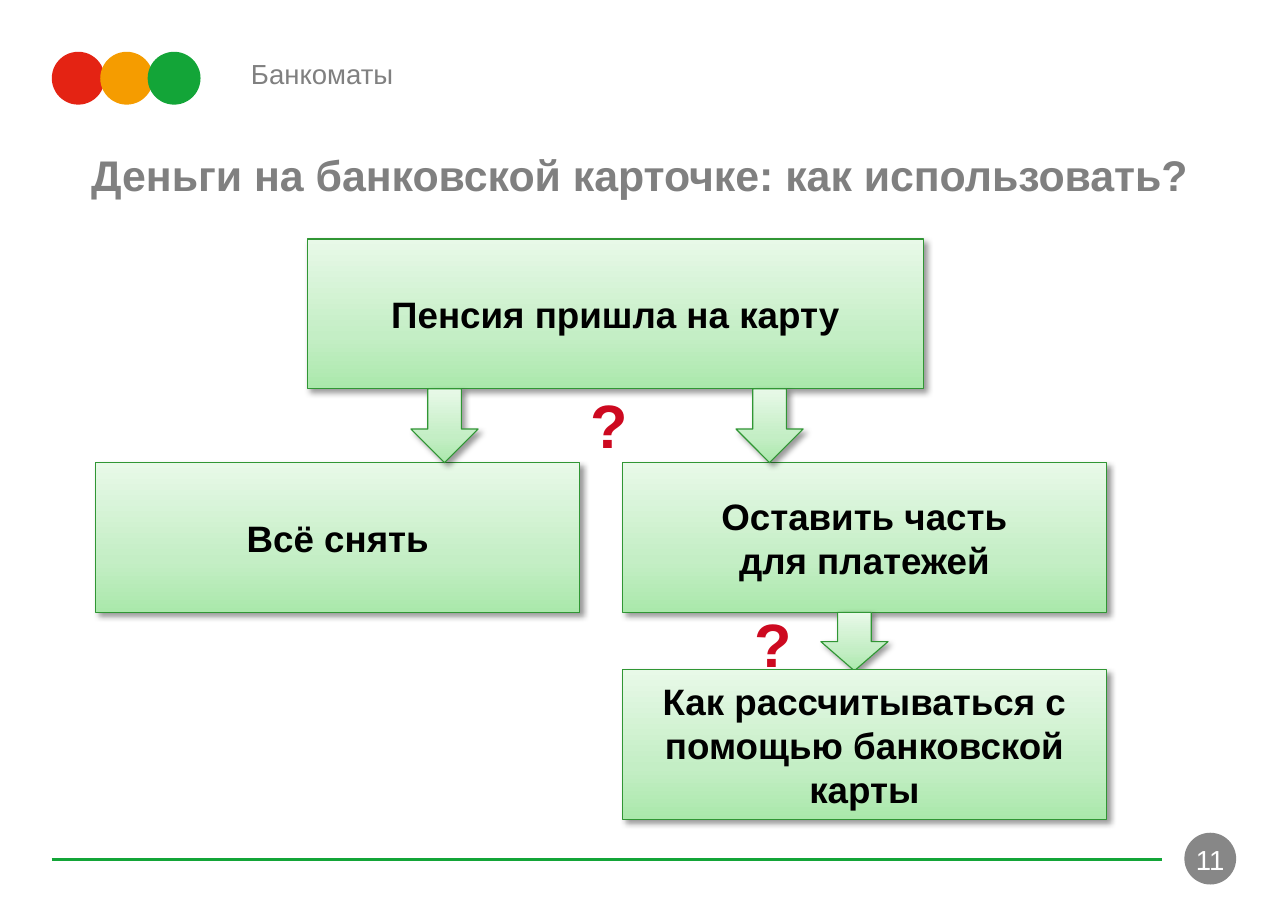
from copy import deepcopy
from dataclasses import dataclass
from lxml.etree import SubElement as Sub
from pptx import Presentation
from pptx.dml.color import RGBColor as RGB
from pptx.enum.shapes import MSO_CONNECTOR as Link, MSO_SHAPE as Kind
from pptx.enum.text import MSO_ANCHOR as Anchor, PP_ALIGN as Align
from pptx.oxml.ns import qn
from pptx.util import Inches, Pt


@dataclass(frozen=True)
class Theme:
    font: str = "Arial"
    red: str = "E42313"
    amber: str = "F59C00"
    green: str = "13A538"
    badge: str = "878787"
    grey: str = "808080"
    white: str = "FFFFFF"
    black: str = "000000"
    alert: str = "CD0920"
    edge: str = "309634"
    fade: tuple = ((0, "AAE8AB"), (0.35, "C4EEC5"), (1, "E8F9E8"))
    small: int = 18
    body: int = 24
    title: int = 28
    mark: int = 40


class Board:
    def __init__(self, slide, theme):
        self.shapes = slide.shapes
        self.theme = theme

    def letter(self, frame, text, size, color, bold=False, align=Align.LEFT):
        frame.word_wrap = True
        frame.text = text
        for par in frame.paragraphs:
            par.alignment = align
            for run in par.runs:
                font = run.font
                font.name, font.size, font.bold = self.theme.font, Pt(size), bold
                font.color.rgb = RGB.from_string(color)

    def label(self, text, area, size, color, bold=False, align=Align.LEFT,
              anchor=Anchor.TOP, inset=True):
        box = self.shapes.add_textbox(*map(Inches, area))
        frame = box.text_frame
        frame.vertical_anchor = anchor
        if not inset:
            frame.margin_left = frame.margin_right = 0
            frame.margin_top = frame.margin_bottom = 0
        self.letter(frame, text, size, color, bold, align)

    def dot(self, left, top, size, color):
        dot = self.shapes.add_shape(Kind.OVAL, *map(Inches, (left, top, size, size)))
        dot.shadow.inherit = False
        dot.fill.solid()
        dot.fill.fore_color.rgb = RGB.from_string(color)
        dot.line.fill.background()

    def rule(self, left, right, top):
        rule = self.shapes.add_connector(
            Link.STRAIGHT, *map(Inches, (left, top, right, top)))
        rule.line.color.rgb = RGB.from_string(self.theme.green)
        rule.line.width = Pt(2)
        Sub(rule._element.spPr, qn("a:effectLst"))

    def glow(self, kind, area):
        shape = self.shapes.add_shape(kind, *map(Inches, area))
        fill = shape.fill
        fill.gradient()
        fill.gradient_angle = 90
        props = shape._element.spPr
        stops = props.find(".//" + qn("a:gsLst"))
        stops.append(deepcopy(stops[-1]))
        for stop, (place, color) in zip(fill.gradient_stops, self.theme.fade):
            stop.position = place
            stop.color.rgb = RGB.from_string(color)
        shape.line.color.rgb = RGB.from_string(self.theme.edge)
        shape.line.width = Pt(0.75)
        shape.shadow.inherit = False
        shade = Sub(props.find(qn("a:effectLst")), qn("a:outerShdw"),
                    blurRad=str(Pt(4)), dist=str(Pt(3)), dir="2700000",
                    algn="tl", rotWithShape="0")
        tint = Sub(shade, qn("a:srgbClr"), val=self.theme.black)
        Sub(tint, qn("a:alpha"), val="40000")
        return shape

    def card(self, text, left, top, width):
        frame = self.glow(Kind.RECTANGLE, (left, top, width, 1.36)).text_frame
        frame.vertical_anchor = Anchor.MIDDLE
        self.letter(frame, text, self.theme.body, self.theme.black, True, Align.CENTER)

    def arrow(self, left, top, height):
        self.glow(Kind.DOWN_ARROW, (left, top, 0.61, height))

    def query(self, left, top):
        self.label("?", (left, top, 0.33, 0.67), self.theme.mark,
                   self.theme.alert, True, inset=False)


def main():
    deck = Presentation()
    deck.slide_width, deck.slide_height = Inches(11.69), Inches(8.27)
    look = Theme()
    board = Board(deck.slides.add_slide(deck.slide_layouts[6]), look)

    for left, color in zip((0.47, 0.91, 1.34), (look.red, look.amber, look.green)):
        board.dot(left, 0.47, 0.48, color)
    board.dot(10.75, 7.56, 0.47, look.badge)
    board.rule(0.47, 10.55, 7.8)
    board.label("Банкоматы", (2.18, 0.47, 7.5, 0.58), look.small, look.grey)
    board.label("11", (10.65, 7.56, 0.67, 0.48), look.small, look.white,
                align=Align.CENTER, anchor=Anchor.MIDDLE)
    board.label("Деньги на банковской карточке: как использовать?",
                (0.73, 1.3, 10.24, 0.63), look.title, look.grey, True)

    board.card("Пенсия пришла на карту", 2.79, 2.17, 5.59)
    board.card("Всё снять", 0.87, 4.2, 4.39)
    board.card("Оставить часть\vдля платежей", 5.65, 4.2, 4.39)
    for left in (3.73, 6.68):
        board.arrow(left, 3.53, 0.67)
    board.query(5.36, 3.52)
    board.arrow(7.45, 5.56, 0.53)
    board.query(6.85, 5.5)
    board.card("Как рассчитываться с помощью банковской карты", 5.65, 6.08, 4.39)

    deck.save("out.pptx")


if __name__ == "__main__":
    main()
